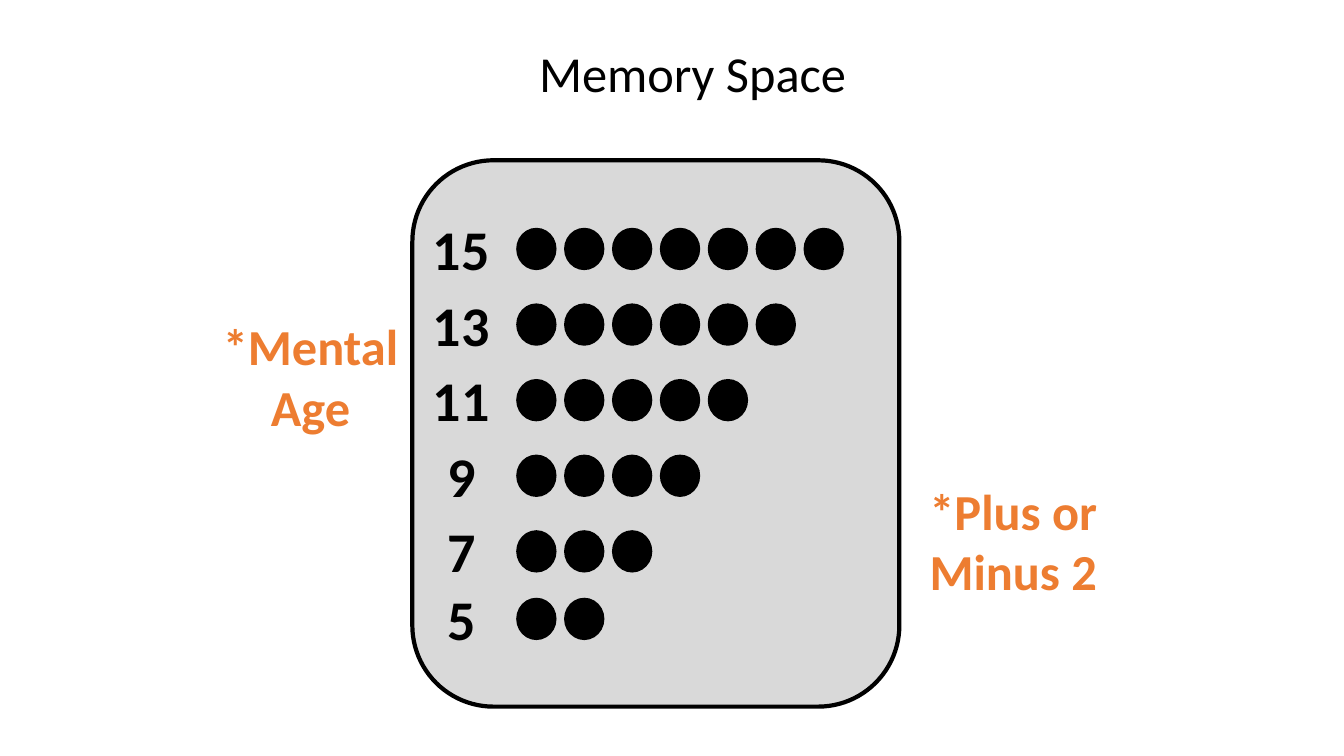
"""Build the Memory Space slide: mental ages beside growing rows of dots."""
from pptx import Presentation
from pptx.dml.color import RGBColor
from pptx.enum.shapes import MSO_SHAPE
from pptx.enum.text import MSO_ANCHOR, MSO_AUTO_SIZE, PP_ALIGN
from pptx.util import Inches, Pt

THEME = {
    "font": "Calibri",
    "ink": RGBColor(0x00, 0x00, 0x00),
    "panel": RGBColor(0xD9, 0xD9, 0xD9),
    "accent": RGBColor(0xED, 0x7D, 0x31),
    "text_size": Pt(36),
    "age_size": Pt(40),
    "outline": Pt(3),
}
PANEL = (4.09, 1.59, 4.83, 5.42)
AGE_ROWS = [
    ("15", 7, 2.08),
    ("13", 6, 2.83),
    ("11", 5, 3.58),
    ("9", 4, 4.33),
    ("7", 3, 5.08),
    ("5", 2, 5.75),
]
CAPTIONS = [
    ("*Mental Age", (2.08, 3.08, 2, 1.3), "accent", True),
    ("*Plus or Minus 2", (9.01, 4.71, 2.08, 1.31), "accent", True),
    ("Memory Space", (2.08, 0.37, 9.58, 0.71), "ink", False),
]
AGE_CENTER, AGE_HEIGHT = 4.58, 0.77
AGE_WIDTHS = {1: 0.49, 2: 0.77}
DOT_LEFT, DOT_STEP, DOT_DROP = 5.12, 0.475, 0.18
DOT_WIDTH, DOT_HEIGHT = 0.4, 0.42


def add_block(page, kind, bounds, fill):
    block = page.shapes.add_shape(kind, *map(Inches, bounds))
    block.shadow.inherit = False
    block.fill.solid()
    block.fill.fore_color.rgb = THEME[fill]
    block.line.fill.background()
    return block


def write(box, text, size, color, bold, align, wrap):
    frame = box.text_frame
    frame.word_wrap = wrap
    frame.auto_size = MSO_AUTO_SIZE.SHAPE_TO_FIT_TEXT
    frame.vertical_anchor = MSO_ANCHOR.TOP
    para = frame.paragraphs[0]
    para.text = text
    para.alignment = align
    para.font.name = THEME["font"]
    para.font.size = THEME[size]
    para.font.bold = bold
    para.font.color.rgb = THEME[color]


def add_age_row(page, age, dots, top):
    width = AGE_WIDTHS[len(age)]
    bounds = (AGE_CENTER - width / 2, top, width, AGE_HEIGHT)
    label = add_block(page, MSO_SHAPE.RECTANGLE, bounds, "panel")
    write(label, age, "age_size", "ink", True, PP_ALIGN.LEFT, False)
    for index in range(dots):
        left = DOT_LEFT + index * DOT_STEP
        bounds = (left, top + DOT_DROP, DOT_WIDTH, DOT_HEIGHT)
        add_block(page, MSO_SHAPE.OVAL, bounds, "ink")


def main():
    deck = Presentation()
    deck.slide_width, deck.slide_height = Inches(13.33), Inches(7.5)
    page = deck.slides.add_slide(deck.slide_layouts[6])
    panel = add_block(page, MSO_SHAPE.ROUNDED_RECTANGLE, PANEL, "panel")
    panel.line.color.rgb = THEME["ink"]
    panel.line.width = THEME["outline"]
    for age, dots, top in AGE_ROWS:
        add_age_row(page, age, dots, top)
    for text, bounds, color, bold in CAPTIONS:
        box = page.shapes.add_textbox(*map(Inches, bounds))
        write(box, text, "text_size", color, bold, PP_ALIGN.CENTER, True)
    deck.save("out.pptx")


if __name__ == "__main__":
    main()
